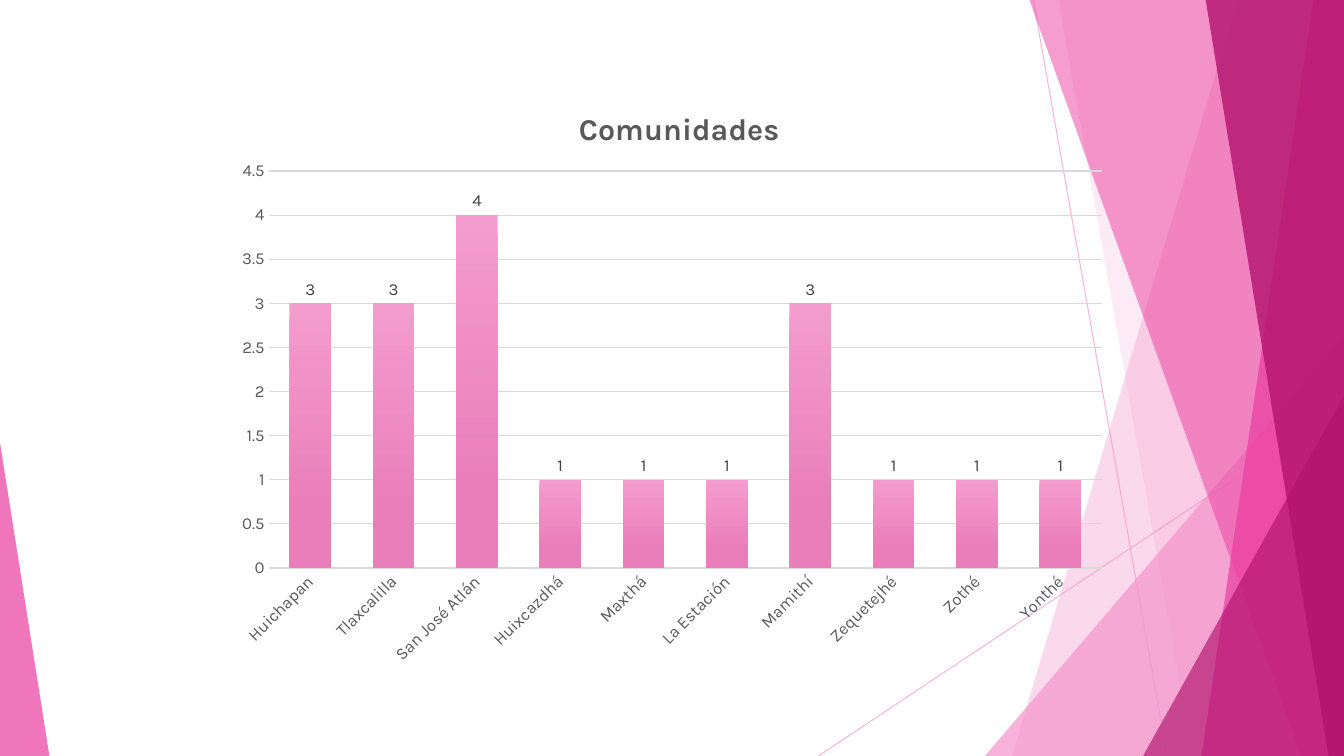
from lxml.etree import SubElement
from pptx import Presentation
from pptx.chart.data import CategoryChartData
from pptx.dml.color import RGBColor
from pptx.enum.chart import XL_CHART_TYPE as ChartType, XL_LABEL_POSITION as LabelPosition, XL_TICK_MARK as TickMark
from pptx.enum.shapes import MSO_CONNECTOR as Connector, MSO_SHAPE as Shape
from pptx.oxml import parse_xml
from pptx.oxml.ns import nsdecls, qn
from pptx.util import Inches, Pt

COLORS = {
    "blush": "F496CB", "pink": "EB3D9F", "magenta": "B2136D",
    "bar_top": "F49CCD", "bar_bottom": "EA7EBB",
    "grid": "D9D9D9", "text": "595959", "label": "404040",
}
COMMUNITIES = {
    "Huichapan": 3, "Tlaxcalilla": 3, "San José Atlán": 4, "Huixcazdhá": 1, "Maxthá": 1,
    "La Estación": 1, "Mamithí": 3, "Zequetejhé": 1, "Zothé": 1, "Yonthé": 1,
}
RAYS = [((76.88, 0), (86.85, 100)), ((100, 53.73), (60.9, 100))]
BACK_FACETS = [(92.1, 75.3, "blush", 36), (78.75, 88.73, "blush", 20)]
FRONT_FACETS = [
    (76.58, 96.83, "pink", 50), (97.73, 89.4, "pink", 70), (89.7, 98.85, "magenta", 80),
]


def rgb(name):
    return RGBColor.from_string(COLORS[name])


def set_alpha(properties, percent):
    color = next(properties.iter(qn("a:srgbClr")))
    SubElement(color, qn("a:alpha")).set("val", str(percent * 1000))


def format_font(font, size=12, color="text", bold=False):
    font.name = "Karla"
    font.size = Pt(size)
    font.bold = bold
    font.color.rgb = rgb(color)


def write_text(frame, text, **text_format):
    run = frame.paragraphs[0].add_run()
    run.text = text
    format_font(run.font, **text_format)


def place(**shares):
    values = "".join(f'<c:{key} val="{value}"/>' for key, value in shares.items())
    target = '<c:layoutTarget val="inner"/>' if "w" in shares else ""
    return parse_xml(
        f'<c:layout {nsdecls("c")}><c:manualLayout>{target}<c:xMode val="edge"/>'
        f'<c:yMode val="edge"/>{values}</c:manualLayout></c:layout>')


class FacetSlide:
    """Draws the facets and the chart in percentages of the slide's size."""

    def __init__(self, presentation):
        self.width, self.height = presentation.slide_width, presentation.slide_height
        self.slide = presentation.slides.add_slide(presentation.slide_layouts[6])

    def scale(self, x, y):
        return round(x * self.width / 100), round(y * self.height / 100)

    def paint(self, shape, color, alpha):
        shape.shadow.inherit = False
        shape.fill.solid()
        shape.fill.fore_color.rgb = rgb(color)
        set_alpha(shape._element.spPr, alpha)
        shape.line.fill.background()

    def ray(self, start, end):
        line = self.slide.shapes.add_connector(
            Connector.STRAIGHT, *self.scale(*start), *self.scale(*end))
        line.line.color.rgb = rgb("blush")
        line.line.width = Pt(0.75)
        set_alpha(line._element.spPr, 70)
        SubElement(line._element.spPr, qn("a:effectLst"))

    def facet(self, top_left, bottom_left, color, alpha):
        builder = self.slide.shapes.build_freeform(*self.scale(top_left, -0.1))
        corners = [(100, -0.1), (100, 100), (bottom_left, 100)]
        builder.add_line_segments([self.scale(*corner) for corner in corners])
        self.paint(builder.convert_to_shape(), color, alpha)

    def triangle(self, left, top, width, apex, color, alpha):
        shape = self.slide.shapes.add_shape(
            Shape.ISOSCELES_TRIANGLE, *self.scale(left, top), *self.scale(width, 100 - top))
        shape.adjustments[0] = apex
        self.paint(shape, color, alpha)

    def column_chart(self, title, values, left, top, width, height):
        data = CategoryChartData()
        data.categories = list(values)
        data.add_series("Series 1", list(values.values()))
        chart = self.slide.shapes.add_chart(
            ChartType.COLUMN_CLUSTERED, *self.scale(left, top), *self.scale(width, height), data).chart
        chart.has_legend = False
        format_font(chart.font)
        write_text(chart.chart_title.text_frame, title, size=21.6, bold=True)
        chart.chart_title.include_in_layout = False
        title_element = chart.chart_title._element
        for layout in title_element.findall(qn("c:layout")):
            title_element.remove(layout)
        title_element.find(qn("c:tx")).addnext(place(x=0.39, y=0.04))
        plot_area = chart._chartSpace.chart.plotArea
        for layout in plot_area.findall(qn("c:layout")):
            plot_area.remove(layout)
        plot_area.insert(0, place(x=0.05, y=0.153, w=0.93, h=0.664))
        self.style_axes(chart.category_axis, chart.value_axis)
        self.style_columns(chart.plots[0])

    def style_axes(self, category_axis, value_axis):
        for axis in (category_axis, value_axis):
            axis.major_tick_mark = axis.minor_tick_mark = TickMark.NONE
            format_font(axis.tick_labels.font)
        category_axis.format.line.color.rgb = rgb("grid")
        category_axis.format.line.width = Pt(1)
        category_axis._element.txPr.find(qn("a:bodyPr")).set("rot", "-2700000")
        value_axis.minimum_scale, value_axis.maximum_scale, value_axis.major_unit = 0, 4.5, 0.5
        value_axis.format.line.fill.background()
        value_axis.major_gridlines.format.line.color.rgb = rgb("grid")
        value_axis.major_gridlines.format.line.width = Pt(0.75)

    def style_columns(self, plot):
        plot.gap_width, plot.overlap, plot.vary_by_categories = 100, -24, False
        fill = plot.series[0].format.fill
        fill.gradient()
        fill.gradient_angle = 270
        for stop, color, position in zip(fill.gradient_stops, ("bar_top", "bar_bottom"), (0, 0.78)):
            stop.color.rgb = rgb(color)
            stop.position = position
        plot.has_data_labels = True
        labels = plot.data_labels
        labels.show_value = True
        labels.position = LabelPosition.OUTSIDE_END
        format_font(labels.font, color="label")


def main():
    presentation = Presentation()
    presentation.slide_width, presentation.slide_height = Inches(13.33), Inches(7.5)
    page = FacetSlide(presentation)
    for start, end in RAYS:
        page.ray(start, end)
    for facet in BACK_FACETS:
        page.facet(*facet)
    page.triangle(73.28, 44.4, 26.72, 1, "blush", 72)
    for facet in FRONT_FACETS:
        page.facet(*facet)
    page.triangle(85.05, 52.4, 14.95, 1, "magenta", 66)
    page.triangle(0, 58.53, 3.68, 0, "pink", 70)
    page.column_chart("Comunidades", COMMUNITIES, 16.65, 10.53, 66.68, 79.07)
    presentation.save("out.pptx")


if __name__ == "__main__":
    main()
